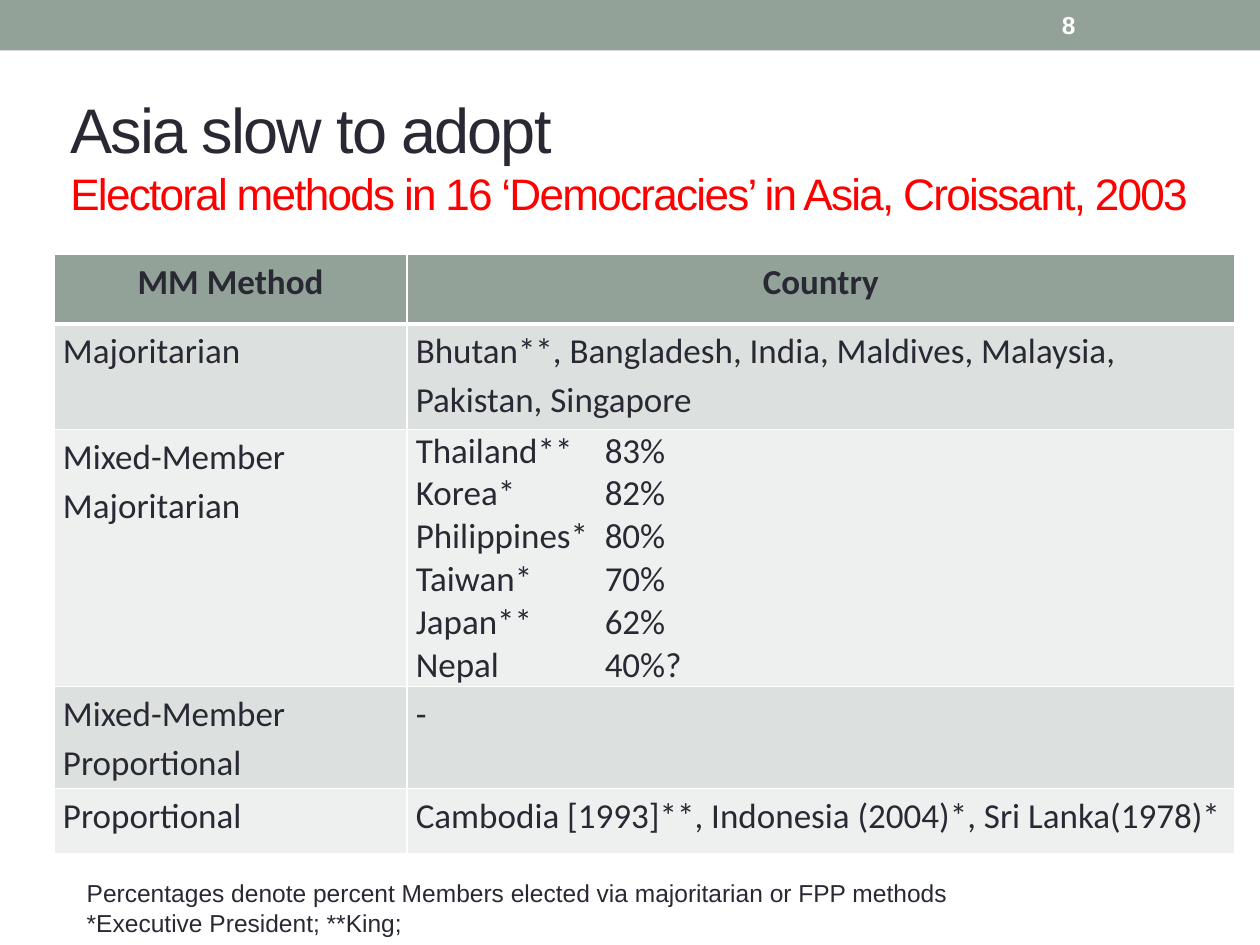
import dataclasses

import lxml.etree
import pptx
import pptx.dml.color
import pptx.enum.shapes
import pptx.enum.text
import pptx.oxml.ns
import pptx.util
from pptx.util import Inches

SAGE, INK, WHITE, RED = "93A299", "292934", "FFFFFF", "FF0000"
BANDS = ("DCE0DE", "EEF0EF")
COLUMN_WIDTHS = (2.8, 6.57)
SHARE_TAB = 1.5


@dataclasses.dataclass
class MethodRow:
    method: str
    countries: list[str]
    height: float
    has_shares: bool = False


HEADER = MethodRow("MM Method", ["Country"], 0.55)
METHODS = [
    MethodRow("Majoritarian",
              ["Bhutan**, Bangladesh, India, Maldives, Malaysia, Pakistan, Singapore"], 0.84),
    MethodRow("Mixed-Member Majoritarian",
              ["Thailand**\t83%", "Korea*\t82%", "Philippines*\t80%",
               "Taiwan*\t70%", "Japan**\t62%", "Nepal\t40%?"], 2.04, has_shares=True),
    MethodRow("Mixed-Member Proportional", ["-"], 0.81),
    MethodRow("Proportional",
              ["Cambodia [1993]**, Indonesia (2004)*, Sri Lanka(1978)*"], 0.52),
]


def rgb(value: str) -> pptx.dml.color.RGBColor:
    return pptx.dml.color.RGBColor.from_string(value)


def write_text(paragraph, text: str, *, size: float, font: str = "Arial",
               color: str = INK, bold: bool = False, tracking: float = 0) -> None:
    """Append a formatted run; tracking is in points."""
    run = paragraph.add_run()
    run.text = text
    run.font.size = pptx.util.Pt(size)
    run.font.name = font
    run.font.bold = bold
    run.font.color.rgb = rgb(color)
    if tracking:
        run.font._element.set("spc", str(round(tracking * 100)))


def add_text_frame(slide, left: float, top: float, width: float, height: float,
                   middle: bool = False):
    box = slide.shapes.add_textbox(Inches(left), Inches(top), Inches(width), Inches(height))
    frame = box.text_frame
    frame.word_wrap = True
    if middle:
        frame.vertical_anchor = pptx.enum.text.MSO_ANCHOR.MIDDLE
    return frame


def add_lines(frame, lines: list[str], **text_format) -> None:
    for index, line in enumerate(lines):
        paragraph = frame.add_paragraph() if index else frame.paragraphs[0]
        write_text(paragraph, line, **text_format)


def add_tab_stop(paragraph, position: float) -> None:
    tabs = lxml.etree.SubElement(paragraph._p.get_or_add_pPr(), pptx.oxml.ns.qn("a:tabLst"))
    lxml.etree.SubElement(tabs, pptx.oxml.ns.qn("a:tab"), pos=str(Inches(position)), algn="l")


def add_cell_borders(cell, **widths: float) -> None:
    """Draw white borders, given in points by side: L, R, T, B."""
    properties = cell._tc.get_or_add_tcPr()
    for side, width in widths.items():
        line = lxml.etree.SubElement(properties, pptx.oxml.ns.qn(f"a:ln{side}"),
                                     w=str(pptx.util.Pt(width)))
        fill = lxml.etree.SubElement(line, pptx.oxml.ns.qn("a:solidFill"))
        lxml.etree.SubElement(fill, pptx.oxml.ns.qn("a:srgbClr"), val=WHITE)


def fill_cell(cell, lines: list[str], row_index: int, has_shares: bool) -> None:
    is_header = row_index == 0
    cell.margin_left = cell.margin_right = Inches(0.07)
    cell.margin_top = cell.margin_bottom = 0
    add_cell_borders(cell, L=1, R=1, T=3 if row_index == 1 else 1, B=3 if is_header else 1)
    cell.fill.solid()
    cell.fill.fore_color.rgb = rgb(SAGE if is_header else BANDS[(row_index - 1) % 2])
    add_lines(cell.text_frame, lines, size=20, font="Calibri", bold=is_header)
    for paragraph in cell.text_frame.paragraphs:
        if is_header:
            paragraph.alignment = pptx.enum.text.PP_ALIGN.CENTER
        if has_shares:
            add_tab_stop(paragraph, SHARE_TAB)
        else:
            paragraph.line_spacing = 1.15
            paragraph.space_before = paragraph.space_after = pptx.util.Pt(6)


def add_methods_table(slide) -> None:
    rows = [HEADER, *METHODS]
    table = slide.shapes.add_table(
        len(rows), len(COLUMN_WIDTHS), Inches(0.43), Inches(2.02),
        Inches(sum(COLUMN_WIDTHS)), Inches(sum(row.height for row in rows))).table
    table.horz_banding = False
    for column, width in zip(table.columns, COLUMN_WIDTHS):
        column.width = Inches(width)
    for index, row in enumerate(rows):
        table.rows[index].height = Inches(row.height)
        fill_cell(table.cell(index, 0), [row.method], index, False)
        fill_cell(table.cell(index, 1), row.countries, index, row.has_shares)


def add_top_band(slide) -> None:
    band = slide.shapes.add_shape(pptx.enum.shapes.MSO_SHAPE.RECTANGLE,
                                  0, 0, Inches(10), Inches(0.4))
    band.shadow.inherit = False
    band.fill.solid()
    band.fill.fore_color.rgb = rgb(SAGE)
    band.line.fill.background()


def main() -> None:
    deck = pptx.Presentation()
    deck.slide_width, deck.slide_height = Inches(10), Inches(7.5)
    slide = deck.slides.add_slide(deck.slide_layouts[6])

    add_top_band(slide)
    heading = add_text_frame(slide, 0.46, 0.52, 9.53, 1.42, middle=True).paragraphs[0]
    write_text(heading, "Asia slow to adopt", size=36, tracking=-1)
    heading.add_line_break()
    write_text(heading, "Electoral methods in 16 ‘Democracies’ in Asia, Croissant, 2003",
               size=25.2, color=RED, tracking=-1)
    page_number = add_text_frame(slide, 8.33, 0.02, 1.17, 0.36, middle=True)
    add_lines(page_number, ["8"], size=14, color=WHITE, bold=True)
    add_methods_table(slide)
    footnotes = add_text_frame(slide, 0.59, 6.92, 9.13, 0.57)
    add_lines(footnotes,
              ["Percentages denote percent Members elected via majoritarian or FPP methods",
               "*Executive President; **King;"], size=14)
    deck.save("out.pptx")


if __name__ == "__main__":
    main()
